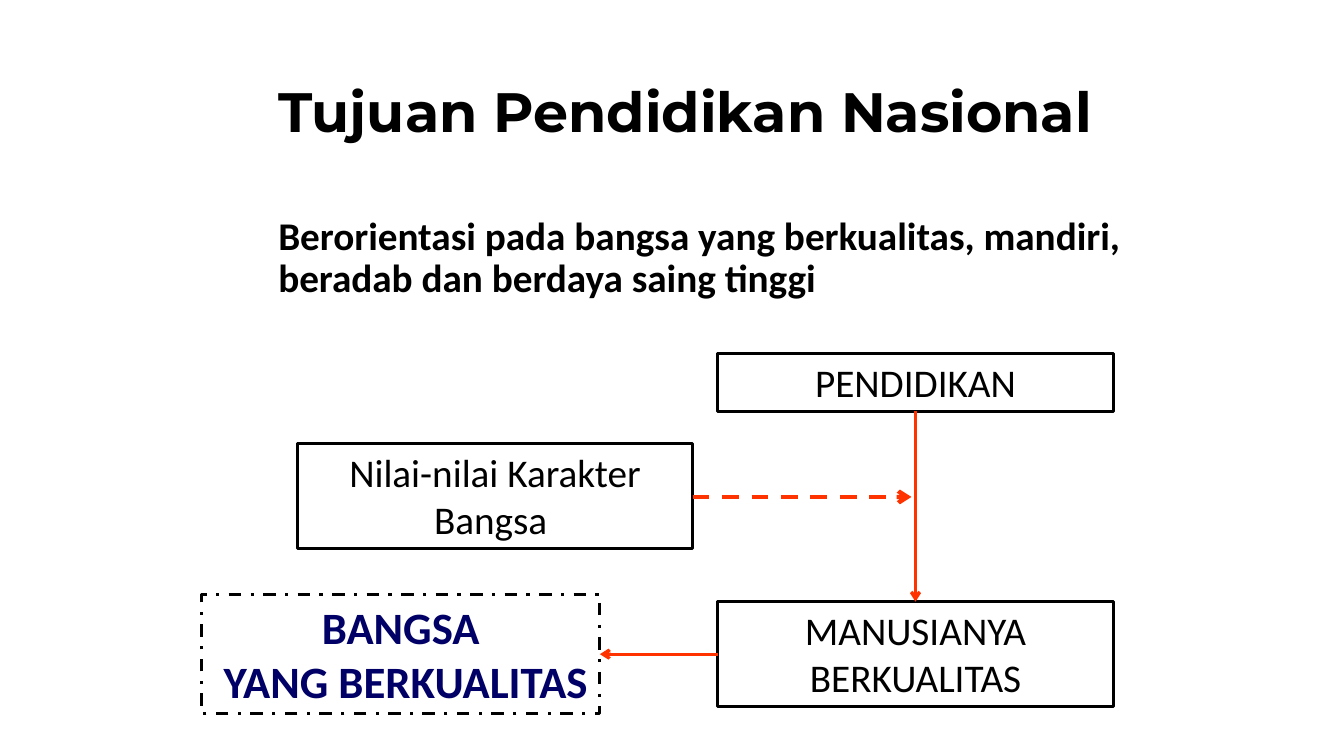
from dataclasses import dataclass

from lxml import etree
from pptx import Presentation
from pptx.dml.color import RGBColor as RGB
from pptx.enum.dml import MSO_LINE as Dash
from pptx.enum.shapes import MSO_CONNECTOR as Connector, MSO_SHAPE as Shape
from pptx.enum.text import MSO_ANCHOR as Anchor, MSO_AUTO_SIZE as AutoSize, PP_ALIGN as Align
from pptx.oxml.ns import qn
from pptx.util import Pt

PX = 9144  # EMU per px, 100 px to the inch


@dataclass(frozen=True)
class Theme:
    ink: RGB = RGB(0, 0, 0)
    navy: RGB = RGB(0, 0, 0x66)
    arrow: RGB = RGB(0xFF, 0x33, 0)
    heading: str = "Montserrat"
    text: str = "Calibri"
    title_size: float = 39.6
    body_size: float = 28
    goal_size: float = 32
    line: float = 2.25
    thick: float = 3


class Deck:
    def __init__(self, theme, width, height):
        self.theme = theme
        self.prs = Presentation()
        self.prs.slide_width, self.prs.slide_height = width * PX, height * PX
        self.slide = self.prs.slides.add_slide(self.prs.slide_layouts[1])

    def style(self, p, size, color, name, bold, align):
        p.alignment = align
        p.font.size, p.font.name, p.font.bold = Pt(size), name, bold
        p.font.color.rgb = color

    def placeholder(self, idx, text, box, size, name, anchor, before=0):
        sp = self.slide.placeholders[idx]
        sp.left, sp.top, sp.width, sp.height = (v * PX for v in box)
        tf = sp.text_frame
        tf.text, tf.auto_size, tf.vertical_anchor = text, AutoSize.NONE, anchor
        p = tf.paragraphs[0]
        self.style(p, size, self.theme.ink, name, True, Align.LEFT)
        p.line_spacing, p.space_before = 0.9, Pt(before)
        # No bullet and no hanging indent
        pPr = p._p.get_or_add_pPr()
        pPr.set("marL", "0")
        pPr.set("indent", "0")
        pPr.insert_element_before(pPr.makeelement(qn("a:buNone")), "a:tabLst", "a:defRPr")

    def box(self, text, box, size=None, color=None, bold=False, dash=None):
        t = self.theme
        sp = self.slide.shapes.add_shape(Shape.RECTANGLE, *(v * PX for v in box))
        sp.shadow.inherit = False
        sp.fill.background()
        sp.line.color.rgb, sp.line.width = t.ink, Pt(t.line)
        if dash:
            sp.line.dash_style = dash
        tf = sp.text_frame
        tf.text, tf.word_wrap, tf.vertical_anchor = text, True, Anchor.TOP
        for p in tf.paragraphs:
            self.style(p, size or t.body_size, color or t.ink, t.text, bold, Align.CENTER)
        return sp

    def arrow(self, start, end, width=None, dash=None):
        c = self.slide.shapes.add_connector(
            Connector.STRAIGHT, *(v * PX for v in (*start, *end)))
        c.line.color.rgb, c.line.width = self.theme.arrow, Pt(width or self.theme.line)
        if dash:
            c.line.dash_style = dash
        etree.SubElement(c.line._get_or_add_ln(), qn("a:tailEnd"), type="arrow")
        etree.SubElement(c._element.spPr, qn("a:effectLst"))


def main():
    theme = Theme()
    deck = Deck(theme, 1333, 750)

    # Title and orientation statement
    deck.placeholder(0, "Tujuan Pendidikan Nasional", (266, 64, 900, 100),
                     theme.title_size, theme.heading, Anchor.MIDDLE)
    deck.placeholder(1, "Berorientasi pada bangsa yang berkualitas, mandiri, "
                     "beradab dan berdaya saing tinggi", (266, 210, 921, 125),
                     theme.body_size, theme.text, Anchor.TOP, before=10)

    # Boxes
    deck.box("BANGSA\n YANG BERKUALITAS", (200, 590, 395, 118), theme.goal_size,
             theme.navy, bold=True, dash=Dash.DASH_DOT)
    deck.box("PENDIDIKAN", (712, 351, 392, 57))
    deck.box("MANUSIANYA BERKUALITAS", (712, 597, 392, 104))
    deck.box("Nilai-nilai Karakter Bangsa ", (295, 440, 392, 104))

    # Arrows
    deck.arrow((908, 408), (908, 597))
    deck.arrow((687, 493), (904, 493), theme.thick, Dash.DASH)
    deck.arrow((712, 649), (595, 649))

    deck.prs.save("out.pptx")


if __name__ == "__main__":
    main()
